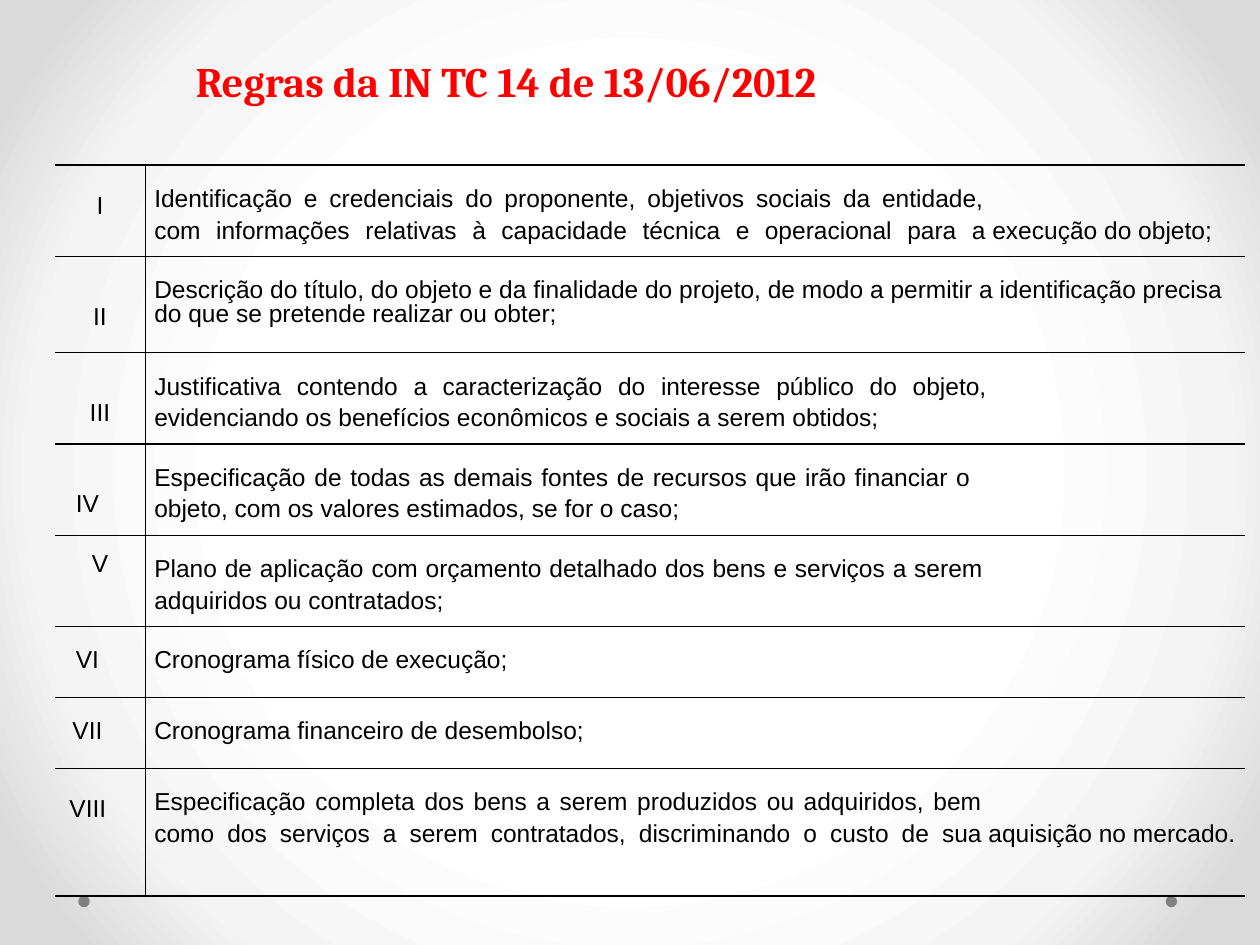
import dataclasses
import pptx
import pptx.dml.color
import pptx.enum.shapes
import pptx.enum.text
import pptx.oxml
import pptx.oxml.ns
import pptx.util
from lxml import etree

Cm, Pt = pptx.util.Cm, pptx.util.Pt
Color = pptx.dml.color.RGBColor.from_string
Align = pptx.enum.text.PP_ALIGN


@dataclasses.dataclass
class Theme:
    title: str = "FF0000"
    ink: str = "000000"
    dot: str = "808080"
    glow: tuple = ((50, "FFFFFF"), (76, "F4F4F4"), (92, "DADADA"))
    head: str = "Cambria"
    body: str = "Arial"
    big: int = 24
    small: int = 14
    lead: float = 13.6


look = Theme()


def edge(cell, drawn):
    """Rule the named sides of a cell and clear the others."""
    props = cell._tc.get_or_add_tcPr()
    for side in "LRTB":
        line = etree.SubElement(props, pptx.oxml.ns.qn(f"a:ln{side}"), w=str(Pt(1)))
        if side in drawn:
            fill = etree.SubElement(line, pptx.oxml.ns.qn("a:solidFill"))
            etree.SubElement(fill, pptx.oxml.ns.qn("a:srgbClr"), val=look.ink)
        else:
            etree.SubElement(line, pptx.oxml.ns.qn("a:noFill"))
    cell.fill.background()


def write(para, text, gap=0, tail=""):
    """Write text with its word gaps widened by gap points, then a plain tail."""
    if gap:
        for i, word in enumerate(text.split()):
            if i:
                space = para.add_run()
                space.text = " "
                space._r.get_or_add_rPr().set("spc", str(round(gap * 100)))
            para.add_run().text = word
        if tail:
            para.add_run().text = " " + tail
    else:
        para.text = text
    for run in para.runs:
        run.font.name = look.body
        run.font.size = Pt(look.small)
        run.font.color.rgb = Color(look.ink)


deck = pptx.Presentation()
deck.slide_width, deck.slide_height = Cm(25.4), Cm(19.05)
slide = deck.slides.add_slide(deck.slide_layouts[6])

# Radial background
slide.background.fill.gradient()
grad = slide.background._cSld.find(".//" + pptx.oxml.ns.qn("a:gradFill"))
stops = "".join(
    f'<a:gs pos="{pos * 1000}"><a:srgbClr val="{hue}"/></a:gs>' for pos, hue in look.glow
)
grad.getparent().replace(grad, pptx.oxml.parse_xml(
    f'<a:gradFill {pptx.oxml.ns.nsdecls("a")} rotWithShape="1"><a:gsLst>{stops}</a:gsLst>'
    '<a:path path="circle"><a:fillToRect l="50000" t="50000" r="50000" b="50000"/></a:path>'
    '</a:gradFill>'
))

# Footer dots
for left in (23.5, 1.58):
    dot = slide.shapes.add_shape(
        pptx.enum.shapes.MSO_SHAPE.OVAL, Cm(left), Cm(18.06), Cm(0.23), Cm(0.23))
    dot.shadow.inherit = False
    dot.fill.solid()
    dot.fill.fore_color.rgb = Color(look.dot)
    dot.line.fill.background()

# Rules: numeral, row height, numeral top, numeral indent (None is centred),
# then lines of text, word gap and plain tail
rules = [
    ("I", 1.84, 0.61, None, [
        ("Identificação e credenciais do proponente, objetivos sociais da entidade,", 2.8),
        ("com informações relativas à capacidade técnica e operacional para a", 4.9,
         "execução do objeto;")]),
    ("II", 1.94, 1.01, None, [
        ("Descrição do título, do objeto e da finalidade do projeto, de modo a permitir "
         "a identificação precisa do que se pretende realizar ou obter;",)]),
    ("III", 1.84, 1.01, None, [
        ("Justificativa contendo a caracterização do interesse público do objeto,", 5),
        ("evidenciando os benefícios econômicos e sociais a serem obtidos;",)]),
    ("IV", 1.84, 1.01, 0.43, [
        ("Especificação de todas as demais fontes de recursos que irão financiar o", 1),
        ("objeto, com os valores estimados, se for o caso;",)]),
    ("V", 1.84, 0.37, None, [
        ("Plano de aplicação com orçamento detalhado dos bens e serviços a serem", 0.5),
        ("adquiridos ou contratados;",)]),
    ("VI", 1.43, 0.48, 0.43, [("Cronograma físico de execução;",)]),
    ("VII", 1.43, 0.48, 0.36, [("Cronograma financeiro de desembolso;",)]),
    ("VIII", 2.57, 0.61, 0.3, [
        ("Especificação completa dos bens a serem produzidos ou adquiridos, bem", 1.5),
        ("como dos serviços a serem contratados, discriminando o custo de sua", 3.5,
         "aquisição no mercado.")]),
]
tall = sum(rule[1] for rule in rules)
table = slide.shapes.add_table(len(rules), 2, Cm(1.1), Cm(3.33), Cm(24), Cm(tall)).table
table.first_row = table.horz_banding = False
table.columns[0].width, table.columns[1].width = Cm(1.83), Cm(22.17)

for row, (mark, high, top, left, lines) in enumerate(rules):
    table.rows[row].height = Cm(high)
    num, item = table.cell(row, 0), table.cell(row, 1)
    for cell, sides, drop, inset in ((num, "RTB", top, left or 0), (item, "LTB", 0.48, 0.18)):
        edge(cell, sides)
        cell.margin_right = cell.margin_bottom = 0
        cell.margin_top, cell.margin_left = Cm(drop), Cm(inset)

    para = num.text_frame.paragraphs[0]
    write(para, mark)
    para.line_spacing = Pt(look.lead)
    para.alignment = Align.CENTER if left is None else Align.LEFT

    for i, line in enumerate(lines):
        para = item.text_frame.add_paragraph() if i else item.text_frame.paragraphs[0]
        write(para, *line)
        para.line_spacing = 1.15 if i else Pt(look.lead)

# Title
title = slide.shapes.add_textbox(Cm(3.7), Cm(0.99), Cm(20.2), Cm(1.27)).text_frame
title.word_wrap = True
title.text = "Regras da IN TC 14 de 13/06/2012"
font = title.paragraphs[0].runs[0].font
font.name, font.size, font.bold = look.head, Pt(look.big), True
font.color.rgb = Color(look.title)

deck.save("out.pptx")
